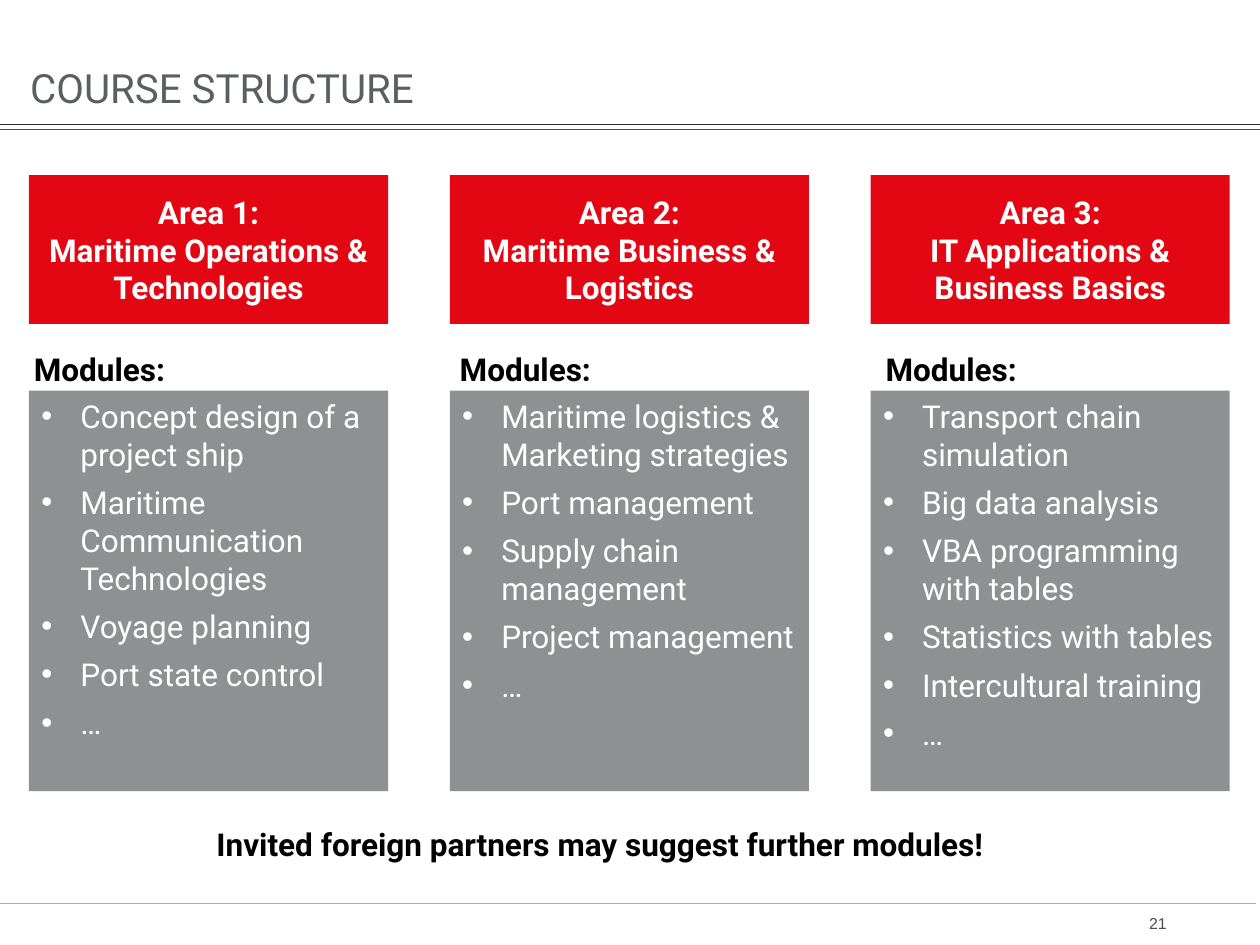
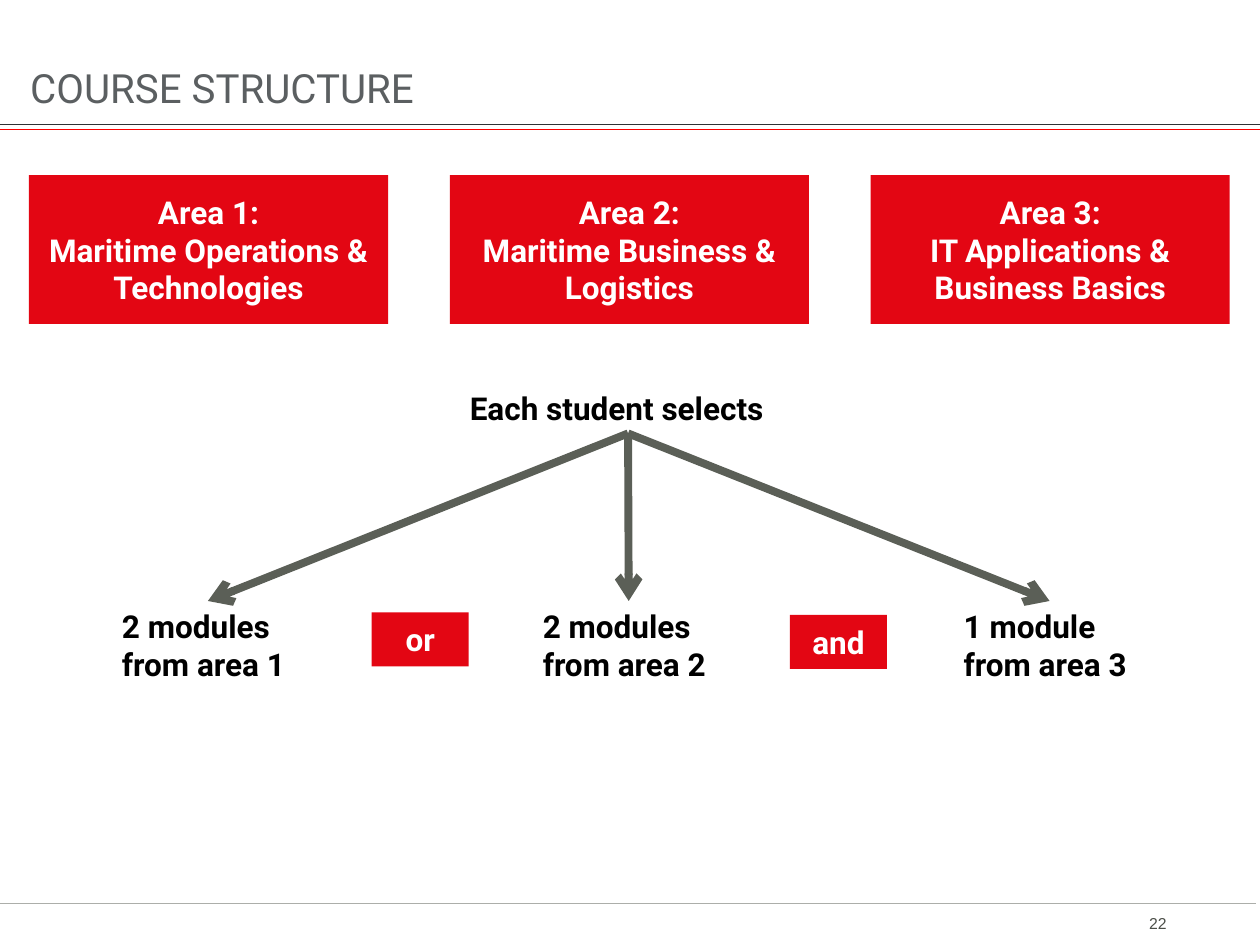
from lxml.etree import SubElement
from pptx import Presentation
from pptx.dml.color import RGBColor
from pptx.enum.shapes import MSO_CONNECTOR, MSO_SHAPE
from pptx.enum.text import MSO_ANCHOR as Anchor, MSO_AUTO_SIZE as AutoSize, PP_ALIGN as Align
from pptx.oxml.ns import qn
from pptx.util import Inches, Pt

# Grid of 100 columns by 75 rows on a 10 by 7.5 inch slide
CELL = Inches(0.1)
COLUMNS, ROWS = 100, 75
FIRST_NUMBER = 21

# Three area columns, evenly spaced
AREA_WIDTH, AREA_PITCH, AREA_LEFT = 28.5, 33.4, 2.3
AREA_LEFTS = [AREA_LEFT + AREA_PITCH * index for index in range(3)]

AREAS = ["Maritime Operations & Technologies",
         "Maritime Business & Logistics",
         "IT Applications & Business Basics"]
MODULES = [
    ["Concept design of a project ship", "Maritime Communication Technologies",
     "Voyage planning", "Port state control", "…"],
    ["Maritime logistics & Marketing strategies", "Port management",
     "Supply chain management", "Project management", "…"],
    ["Transport chain simulation", "Big data analysis", "VBA programming with tables",
     "Statistics with tables", "Intercultural training", "…"],
]
CHOICES = ["2 modules", "2 modules", "1 module"]


def colour(value):
    return RGBColor.from_string(value)


def grid(*cells):
    return [round(cell * CELL) for cell in cells]


class SlideBuilder:
    FONT, NUMBER_FONT = "Roboto", "Arial"
    RED, GREY, ARROW = "E30613", "8F9092", "5B5F57"
    TITLE, NUMBER, WHITE, BLACK = "5B5F61", "4B4E48", "FFFFFF", "000000"
    RULES = [(0, 10.3, "FF0000", 0.5), (0, 9.9, "303234", 0.5), (-0.3, 71.7, "ACAEAA", 1)]

    def __init__(self, deck):
        self.deck = deck
        self.page = None

    def new_page(self, title):
        self.page = self.deck.slides.add_slide(self.deck.slide_layouts[5])
        for left, row, shade, weight in self.RULES:
            self.line((left, row), (left + COLUMNS, row), shade, weight)
        self.title(title)
        self.page_number()

    def title(self, words):
        box = self.page.shapes.title
        box.left, box.top, box.width, box.height = grid(0.1, 3.9, 81.9, 6.1)
        self.wide_margins(box.text_frame)
        self.set_text(box.text_frame, [words], self.TITLE, size=23, bold=False)

    def page_number(self):
        box = self.page.shapes.add_textbox(*grid(71.3, 71.4, 23.6, 3.8))
        self.wide_margins(box.text_frame)
        para = box.text_frame.paragraphs[0]
        para.alignment = Align.RIGHT
        self.style(para.font, self.NUMBER, 9, False, self.NUMBER_FONT)
        field = SubElement(para._p, qn("a:fld"), type="slidenum",
                           id="{B6F15528-21DE-4FAA-801E-634DDDAF4B2B}")
        SubElement(field, qn("a:rPr"), lang="en-GB")
        number = FIRST_NUMBER + len(self.deck.slides) - 1
        SubElement(field, qn("a:t")).text = str(number)

    def wide_margins(self, frame):
        frame.word_wrap = True
        frame.auto_size = AutoSize.NONE
        frame.vertical_anchor = Anchor.TOP
        frame.margin_left = frame.margin_right = Inches(0.23)
        frame.margin_top = frame.margin_bottom = Inches(0.11)

    def style(self, font, shade, size, bold, name):
        font.name, font.size, font.bold = name, Pt(size), bold
        font.color.rgb = colour(shade)

    def set_text(self, frame, lines, shade, size=18, bold=True, align=Align.LEFT, bullets=False):
        for index, line in enumerate(lines):
            para = frame.add_paragraph() if index else frame.paragraphs[0]
            para.text = line
            para.alignment = align
            if bullets:
                self.bullet(para)
            self.style(para.font, shade, size, bold, self.FONT)

    def bullet(self, para):
        properties = para._p.get_or_add_pPr()
        indent = Inches(0.31)
        properties.set("marL", str(indent))
        properties.set("indent", str(-indent))
        SubElement(properties, qn("a:buFont"), typeface="Arial")
        SubElement(properties, qn("a:buChar"), char="•")
        para.space_after = Pt(6)

    def panel(self, place, fill):
        box = self.page.shapes.add_shape(MSO_SHAPE.RECTANGLE, *grid(*place))
        box.shadow.inherit = False
        box.fill.solid()
        box.fill.fore_color.rgb = colour(fill)
        box.line.fill.background()
        box.text_frame.word_wrap = True
        return box.text_frame

    def red_box(self, place, lines):
        frame = self.panel(place, self.RED)
        frame.vertical_anchor = Anchor.MIDDLE
        self.set_text(frame, lines, self.WHITE, align=Align.CENTER)

    def module_list(self, place, modules):
        frame = self.panel(place, self.GREY)
        frame.vertical_anchor = Anchor.TOP
        self.set_text(frame, modules, self.WHITE, bold=False, bullets=True)

    def label(self, place, lines, wrap=False):
        box = self.page.shapes.add_textbox(*grid(*place))
        box.text_frame.word_wrap = wrap
        box.text_frame.auto_size = AutoSize.SHAPE_TO_FIT_TEXT
        self.set_text(box.text_frame, lines, self.BLACK)
        return box

    def line(self, start, end, shade, weight):
        link = self.page.shapes.add_connector(MSO_CONNECTOR.STRAIGHT, *grid(*start, *end))
        link.line.color.rgb = colour(shade)
        link.line.width = Pt(weight)
        SubElement(link._element.spPr, qn("a:effectLst"))
        return link

    def arrow(self, source, target):
        link = self.line((0, 0), (1, 1), self.ARROW, 4.5)
        SubElement(link._element.spPr.find(qn("a:ln")), qn("a:tailEnd"), type="arrow")
        link.begin_connect(source, 2)
        link.end_connect(target, 0)

    def area_headings(self):
        for number, (left, name) in enumerate(zip(AREA_LEFTS, AREAS), 1):
            self.red_box((left, 13.9, AREA_WIDTH, 11.8), [f"Area {number}:", name])


def build_modules(builder):
    builder.new_page("COURSE STRUCTURE")
    for index, (left, modules) in enumerate(zip(AREA_LEFTS, MODULES)):
        builder.module_list((left, 31, AREA_WIDTH, 31.8), modules)
        builder.label((1.7 + 33.8 * index, 27.3, 13.1, 4), ["Modules:"])
    builder.area_headings()
    builder.label((16.2, 65, 67.6, 4),
                  ["Invited foreign partners may suggest further modules!"], wrap=True)


def build_selection(builder):
    builder.new_page("COURSE STRUCTURE")
    builder.area_headings()

    # Choice tree
    root = builder.label((36.3, 30.4, 27.1, 4), ["Each student selects"])
    for number, (left, choice) in enumerate(zip(AREA_LEFTS, CHOICES), 1):
        target = builder.label((left + 6.4, 47.7, 15.6, 7.1),
                               [choice, f"from area {number}"])
        builder.arrow(root, target)

    # Words between the choices
    for left, top, word in [(29.5, 48.6, "or"), (62.7, 48.8, "and")]:
        builder.red_box((left, top, 7.7, 4.3), [word])


def main():
    deck = Presentation()
    deck.slide_width, deck.slide_height = grid(COLUMNS, ROWS)
    deck.element.set("firstSlideNum", str(FIRST_NUMBER))
    builder = SlideBuilder(deck)
    build_modules(builder)
    build_selection(builder)
    deck.save("out.pptx")


if __name__ == "__main__":
    main()
